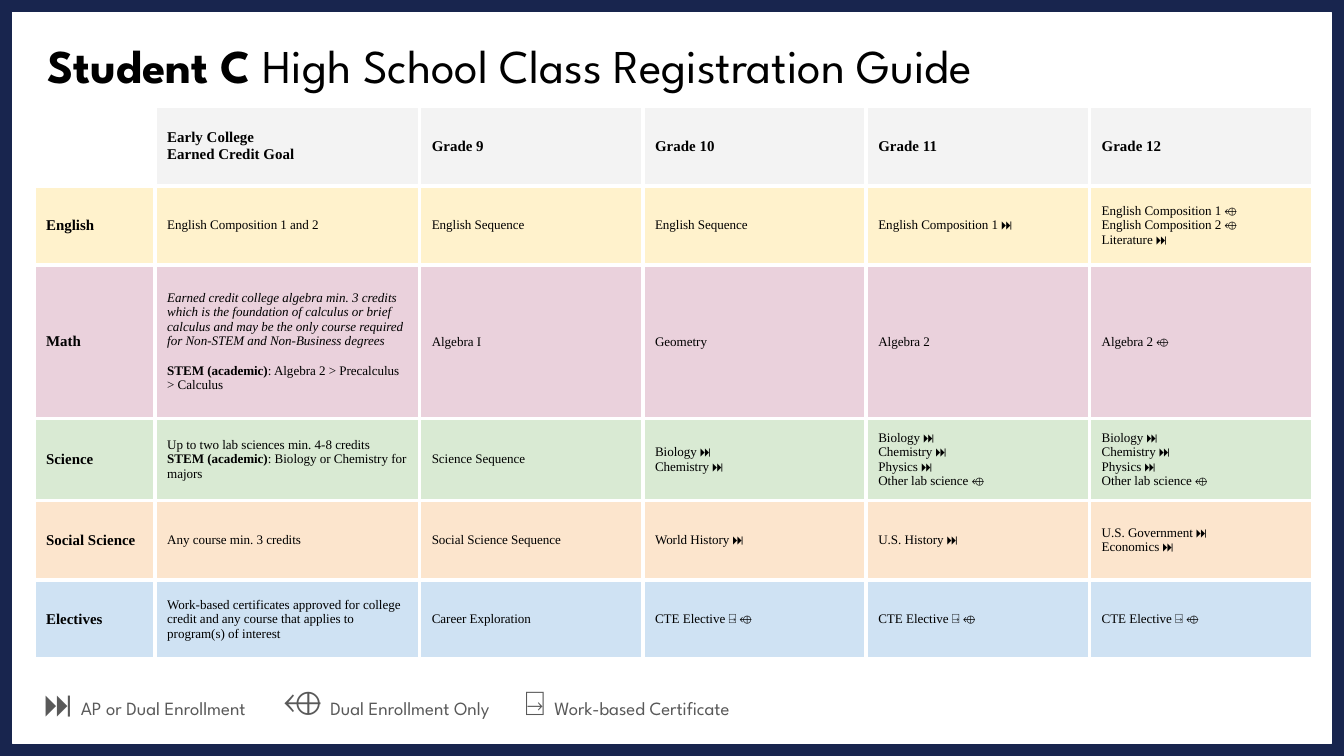
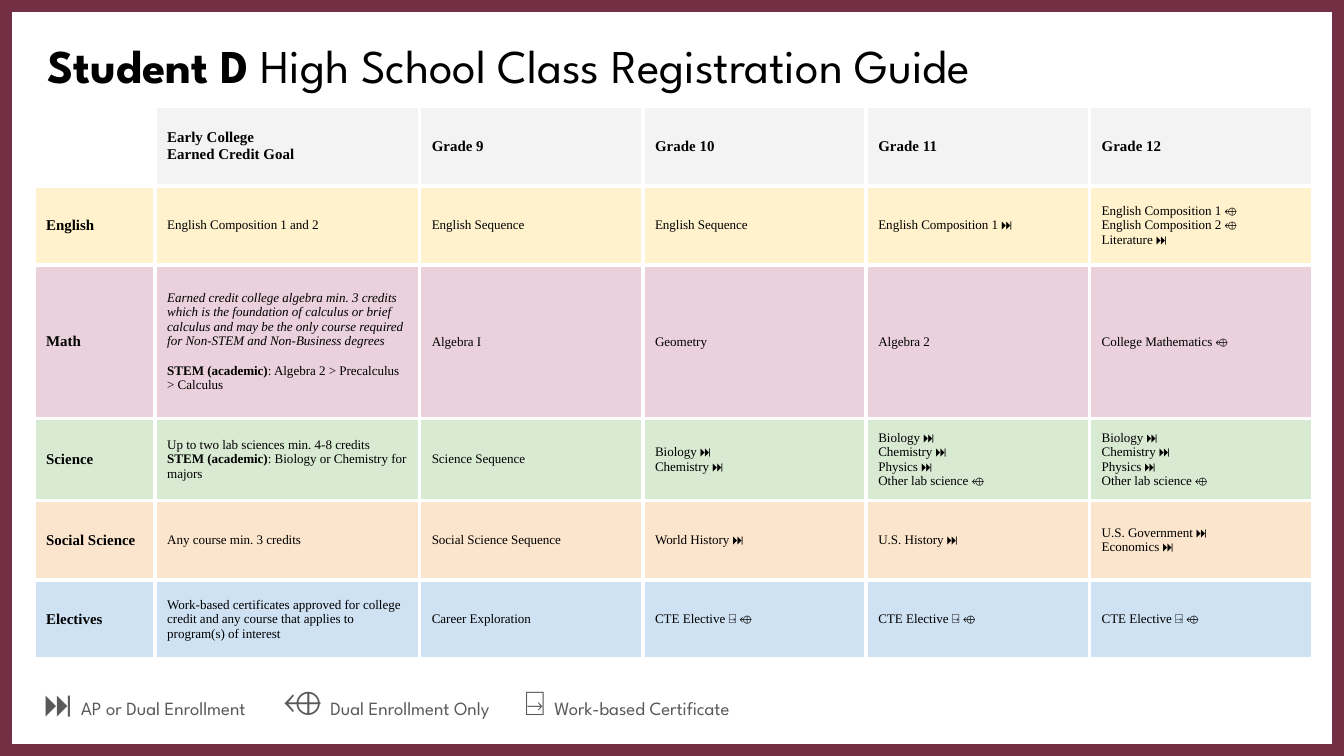
from pptx import Presentation
from pptx import util as u
from pptx.dml.color import RGBColor
from pptx.enum import shapes, text
from pptx.oxml import parse_xml
from pptx.oxml.ns import nsdecls

WIDE, HIGH = 25.4, 14.29
EDGE, LEFT = 0.24, 0.64
WHITE, BLACK, GRAY, HEAD = "FFFFFF", "000000", "595959", "F3F3F3"
SANS, SERIF, SIGN = "League Spartan", "Times New Roman", "Arial"

COLS = [2.29, 5.0] + [4.22] * 4
ROWS = [1.5, 1.5, 2.9, 1.55, 1.5, 1.5, 1.5]

# Cell text: a new line starts a paragraph, * switches bold, a leading / is italic
GRADES = ["", "Early College\nEarned Credit Goal",
          "Grade 9", "Grade 10", "Grade 11", "Grade 12"]
LABS = "Biology ⏭\nChemistry ⏭"
MORE = LABS + "\nPhysics ⏭\nOther lab science ⬲"
TRADE = "CTE Elective ⍈ ⬲"
GOAL = ("/Earned credit college algebra min. 3 credits which is the foundation "
        "of calculus or brief calculus and may be the only course required for "
        "Non-STEM and Non-Business degrees\n"
        "*STEM (academic)*: Algebra 2 > Precalculus > Calculus")
KEYS = [("⏭", "AP or Dual Enrollment", 4.53, 0.79),
        ("⬲", "Dual Enrollment Only", 4.55, 0.79),
        ("⍈", "Work-based Certificate", 4.9, 1.04)]


def plan(math):
    """Rows of the guide as (fill, cells); math is the grade 12 math class."""
    return [
        (HEAD, GRADES),
        ("FFF2CC", ["English", "English Composition 1 and 2", "English Sequence",
                    "English Sequence", "English Composition 1 ⏭",
                    "English Composition 1 ⬲\nEnglish Composition 2 ⬲\nLiterature ⏭"]),
        ("EAD1DC", ["Math", GOAL, "Algebra I", "Geometry", "Algebra 2", math]),
        ("D9EAD3", ["Science",
                    "Up to two lab sciences min. 4-8 credits\n"
                    "*STEM (academic)*: Biology or Chemistry for majors",
                    "Science Sequence", LABS, MORE, MORE]),
        ("FCE5CD", ["Social Science", "Any course min. 3 credits",
                    "Social Science Sequence", "World History ⏭",
                    "U.S. History ⏭", "U.S. Government ⏭\nEconomics ⏭"]),
        ("CFE2F3", ["Electives",
                    "Work-based certificates approved for college credit and any "
                    "course that applies to program(s) of interest",
                    "Career Exploration", TRADE, TRADE, TRADE]),
    ]


def paint(fill, tint):
    fill.solid()
    fill.fore_color.rgb = RGBColor.from_string(tint)


def style(font, face=None, size=None, tint=None, bold=None):
    if face:
        font.name = face
    if size:
        font.size = u.Pt(size)
    if tint:
        paint(font.fill, tint)
    if bold is not None:
        font.bold = bold


def pad(item, side, top):
    """Set the insets of a text frame or cell."""
    item.margin_left = item.margin_right = u.Cm(side)
    item.margin_top = item.margin_bottom = u.Cm(top)


def rule(cell, side, width):
    cell._tc.get_or_add_tcPr().append(parse_xml(
        f'<a:ln{side} {nsdecls("a")} w="{u.Pt(width)}"><a:solidFill>'
        f'<a:srgbClr val="{WHITE}"/></a:solidFill></a:ln{side}>'))


def panel(slide, box):
    card = slide.shapes.add_shape(shapes.MSO_SHAPE.RECTANGLE, *map(u.Cm, box))
    card.shadow.inherit = False
    paint(card.fill, WHITE)
    paint(card.line.fill, WHITE)
    card.line.width = u.Pt(0.75)
    slide.shapes.title.element.addprevious(card.element)


def heading(slide, box, name):
    title = slide.shapes.title
    title.left, title.top, title.width, title.height = map(u.Cm, box)
    frame = title.text_frame
    frame.word_wrap = True
    frame.auto_size = text.MSO_AUTO_SIZE.NONE
    frame.vertical_anchor = text.MSO_ANCHOR.TOP
    pad(frame, 0.25, 0.25)
    para = frame.paragraphs[0]
    para.alignment = text.PP_ALIGN.LEFT
    style(para.font, SANS, 25.2, BLACK)
    for part, bold in ((name, True), (" High School Class Registration Guide", False)):
        run = para.add_run()
        run.text = part
        style(run.font, bold=bold)


def write(cell, words, main):
    """Fill a cell; main marks the header row and the subject column."""
    cell.vertical_anchor = text.MSO_ANCHOR.MIDDLE
    pad(cell, 0.23, 0.18)
    frame = cell.text_frame
    slant = False
    for i, line in enumerate(words.split("\n")):
        para = frame.add_paragraph() if i else frame.paragraphs[0]
        if slant:
            para.space_before = u.Pt(8)
        slant = line.startswith("/")
        style(para.font, SERIF, 8 if main else 7, BLACK, main)
        para.font.italic = slant
        for j, part in enumerate(line.lstrip("/").split("*")):
            if part:
                run = para.add_run()
                run.text = part
                if j % 2:
                    run.font.bold = True


def guide(slide, left, top, math):
    table = slide.shapes.add_table(
        len(ROWS), len(COLS), u.Cm(left), u.Cm(top),
        u.Cm(sum(COLS)), u.Cm(sum(ROWS))).table
    table.first_row = table.horz_banding = False
    for col, width in zip(table.columns, COLS):
        col.width = u.Cm(width)
    for row, height in zip(table.rows, ROWS):
        row.height = u.Cm(height)

    # Subject rows
    for r, (tint, cells) in enumerate(plan(math)):
        for c, words in enumerate(cells):
            cell = table.cell(r, c)
            for side in "LRTB":
                rule(cell, side, 2.25)
            paint(cell.fill, tint if words else WHITE)
            if words:
                write(cell, words, r == 0 or c == 0)

    # Open row behind the legend
    last = len(ROWS) - 1
    table.cell(last, 0).merge(table.cell(last, len(COLS) - 1))
    for cell in table.rows[last].cells:
        for side in "LRTB":
            rule(cell, side, 2.25 if side == "T" else 0.75)
        cell.fill.background()


def legend(slide, left, mid):
    """Row of keys centred on the height mid."""
    for sign, label, width, height in KEYS:
        box = slide.shapes.add_textbox(
            *map(u.Cm, (left, mid - height / 2, width, height)))
        frame = box.text_frame
        frame.word_wrap = True
        frame.vertical_anchor = text.MSO_ANCHOR.MIDDLE
        pad(frame, 0.2, 0.2)
        para = frame.paragraphs[0]
        style(para.font, tint=GRAY)
        for part, face, size in ((sign + " ", SIGN, 18), (label, SANS, 10)):
            run = para.add_run()
            run.text = part
            style(run.font, face, size)
        left += width


def page(deck, name, tint, math):
    slide = deck.slides.add_slide(deck.slide_layouts[5])
    paint(slide.background.fill, tint)
    panel(slide, (EDGE, EDGE, WIDE - 2 * EDGE, HIGH - 2 * EDGE))
    heading(slide, (LEFT, 0.43, 23.67, 1.6), name)
    guide(slide, LEFT, 2.01, math)
    legend(slide, LEFT, 13.27)


def main():
    deck = Presentation()
    deck.slide_width, deck.slide_height = u.Cm(WIDE), u.Cm(HIGH)
    page(deck, "Student C", "18254E", "Algebra 2 ⬲")
    page(deck, "Student D", "733045", "College Mathematics ⬲")
    deck.save("out.pptx")


if __name__ == "__main__":
    main()
